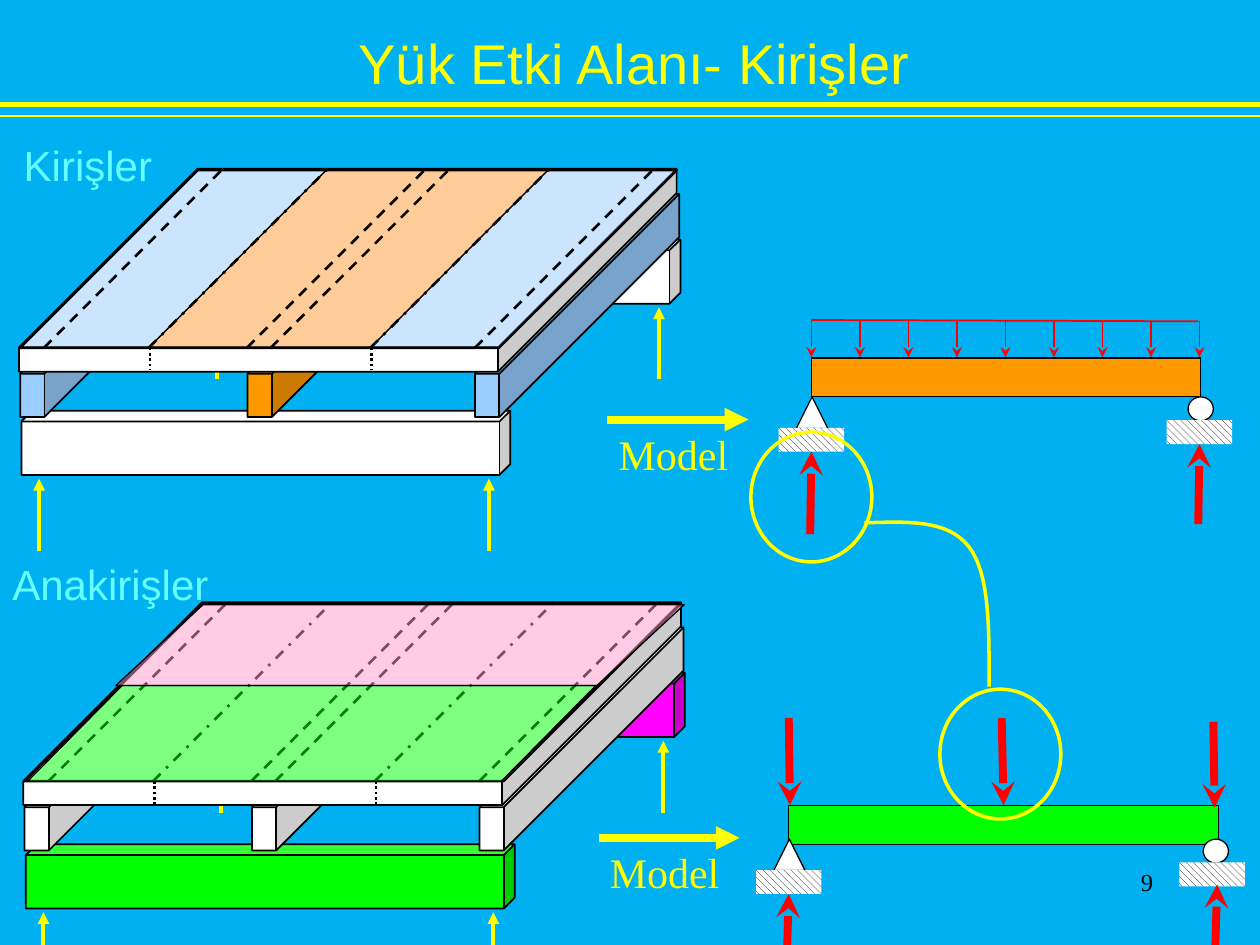
import lxml.etree
import pptx
import pptx.dml.color
import pptx.enum.dml
import pptx.enum.shapes
import pptx.enum.text
import pptx.oxml.ns
import pptx.util

SHAPE = pptx.enum.shapes.MSO_SHAPE
DASH = pptx.enum.dml.MSO_LINE
ALIGN = pptx.enum.text.PP_ALIGN
YELLOW, RED, BLACK, WHITE = "FFFF00", "FF0000", "000000", "FFFFFF"
GREEN, BLUE, ORANGE, CYAN = "00FF00", "99CCFF", "FF9900", "66FFFF"
SLAB_RUN = 1.41             # slab depth, equal across and up the slide
SLAB_FRONT = 2.76           # front edge of the upper slab
LOWER_FLOOR = (0.035, 3.44)  # shift from the upper floor to the lower one


def inch(value):
    return pptx.util.Cm(value * 2.54)


def rgb(code):
    return pptx.dml.color.RGBColor.from_string(code)


def paint(shape, fill=None, line=None, width=1, alpha=None):
    """Fill and outline a shape; None leaves that part empty."""
    shape.shadow.inherit = False
    if fill:
        shape.fill.solid()
        shape.fill.fore_color.rgb = rgb(fill)
        if alpha:
            color = shape.fill._xPr.find(".//" + pptx.oxml.ns.qn("a:srgbClr"))
            lxml.etree.SubElement(color, pptx.oxml.ns.qn("a:alpha"), val=str(alpha * 1000))
    else:
        shape.fill.background()
    if line:
        shape.line.color.rgb = rgb(line)
        shape.line.width = pptx.util.Pt(width)
    else:
        shape.line.fill.background()
    return shape


def block(slide, kind, box, fill=None, line=BLACK, width=0.75, adj=None, alpha=None):
    shape = slide.shapes.add_shape(kind, *map(inch, box))
    if adj is not None:
        shape.adjustments[0] = adj
    return paint(shape, fill, line, width, alpha)


def cube(slide, box, fill, adj):
    block(slide, SHAPE.CUBE, box, fill, width=1, adj=adj)


def outline(slide, points, closed=True, **style):
    points = [(inch(x), inch(y)) for x, y in points]
    builder = slide.shapes.build_freeform(*points[0], scale=1.0)
    builder.add_line_segments(points[1:], close=closed)
    return paint(builder.convert_to_shape(), **style)


def line(slide, start, end, color, width, dash=None, head=None, joined=None):
    """Straight line; joined is (shape, site) for its far end."""
    straight = slide.shapes.add_connector(
        pptx.enum.shapes.MSO_CONNECTOR.STRAIGHT, *map(inch, (*start, *end)))
    straight.line.color.rgb = rgb(color)
    straight.line.width = pptx.util.Pt(width)
    if dash:
        straight.line.dash_style = dash
    if head:
        lxml.etree.SubElement(straight.line._get_or_add_ln(),
                              pptx.oxml.ns.qn("a:tailEnd"), type=head)
    lxml.etree.SubElement(straight._element.spPr, pptx.oxml.ns.qn("a:effectLst"))
    if joined:
        straight.end_connect(*joined)


def force(slide, start, end, joined=None):
    line(slide, start, end, RED, 4.5, head="stealth", joined=joined)


def write(frame, text, size, font, color, align=ALIGN.LEFT, spacing=None, wrap=True):
    frame.word_wrap = wrap
    frame.text = text
    paragraph = frame.paragraphs[0]
    paragraph.alignment = align
    paragraph.line_spacing = spacing
    paragraph.font.size = pptx.util.Pt(size)
    paragraph.font.name = font
    paragraph.font.color.rgb = rgb(color)


def label(slide, box, *text, **layout):
    write(slide.shapes.add_textbox(*map(inch, box)).text_frame, *text, **layout)


def heading(slide, text):
    title = slide.shapes.title
    title.left, title.top, title.width, title.height = map(inch, (2.73, 0.17, 4.61, 0.64))
    write(title.text_frame, text, 32, "Arial", YELLOW, ALIGN.CENTER, wrap=False)
    for y, width in ((0.83, 3), (0.92, 1)):
        line(slide, (0, y), (10, y), YELLOW, width)


def floor_frame(slide, shift, girders, beams):
    """Girders, their reactions, beams and slab, from back to front."""
    dx, dy = shift
    for girder, left, top, feet in ((girders[0], 1.52, 1.9, (1.72, 5.23)),
                                    (girders[1], 0.17, 3.26, (0.31, 3.88))):
        reactions = [((x + dx, top + dy + 1.11), (x + dx, top + dy + 0.54)) for x in feet]
        if top < 3:     # the rear reactions stand behind their girder
            for start, end in reactions:
                line(slide, start, end, YELLOW, 2.25, head="triangle")
        cube(slide, (left + dx, top + dy, 3.88, 0.51), girder, 0.168)
        if top > 3:
            for start, end in reactions:
                line(slide, start, end, YELLOW, 2.25, head="triangle")
    for index in (2, 1, 0):
        cube(slide, (0.16 + 1.805 * index + dx, 1.54 + dy, 1.62, 1.77), beams[index], 0.881)
    cube(slide, (0.15 + dx, 1.34 + dy, 5.22, 1.61), WHITE, 0.881)


def slab_strip(slide, left, right, shift=(0, 0), **style):
    front, back = SLAB_FRONT + shift[1], SLAB_FRONT - SLAB_RUN + shift[1]
    left, right = left + shift[0], right + shift[0]
    outline(slide, [(left, front), (right, front),
                    (right + SLAB_RUN, back), (left + SLAB_RUN, back)], **style)


def floor_lines(slide, shift):
    """Beam edges, strip borders and slab outline."""
    front = SLAB_FRONT + shift[1]
    borders = (1.18, 2.94)
    for positions, dash in (((3.77, 2.15, 1.96, 0.35), DASH.DASH), (borders, DASH.DASH_DOT)):
        for x in positions:
            x += shift[0]
            line(slide, (x, front), (x + SLAB_RUN, front - SLAB_RUN), BLACK, 1.5, dash)
    slab_strip(slide, 0.16, 3.96, shift, line=BLACK, width=1.5)
    for x in borders:
        x += shift[0] + 0.01
        line(slide, (x, front), (x, front + 0.18), BLACK, 1.5, DASH.ROUND_DOT)


def model_arrow(slide, left, y):
    line(slide, (left, y), (left + 1.12, y), YELLOW, 4.5, head="triangle")
    label(slide, (left - 0.01, y + 0.02, 1.07, 0.5), "Model", 24, "Times New Roman", YELLOW,
          align=ALIGN.CENTER, wrap=False)


def beam_model(slide, box, fill, support, roller, roller_ground):
    """Simply supported beam; returns the beam and its two grounds."""
    left = box[0]
    beam = block(slide, SHAPE.RECTANGLE, box, fill)
    block(slide, SHAPE.ISOSCELES_TRIANGLE, (left - 0.12, support, 0.25, 0.25), WHITE)
    block(slide, SHAPE.OVAL, (roller, support, 0.2, 0.19), WHITE)
    grounds = []
    for x, y in ((left - 0.26, support + 0.245), (roller_ground, support + 0.185)):
        ground = block(slide, SHAPE.RECTANGLE, (x, y, 0.52, 0.19), line=None)
        ground.fill.patterned()
        ground.fill.pattern = pptx.enum.dml.MSO_PATTERN.WIDE_DOWNWARD_DIAGONAL
        ground.fill.fore_color.rgb = rgb(BLACK)
        ground.fill.back_color.rgb = rgb(WHITE)
        grounds.append(ground)
    return beam, *grounds


def bezier(a, b, c, d, steps=16):
    for t in (i / steps for i in range(1, steps + 1)):
        u = 1 - t
        yield tuple(u**3 * p + 3 * u * u * t * q + 3 * u * t * t * r + t**3 * s
                    for p, q, r, s in zip(a, b, c, d))


def main():
    deck = pptx.Presentation()
    deck.slide_width, deck.slide_height = inch(10), inch(7.5)
    slide = deck.slides.add_slide(deck.slide_layouts[5])
    slide.background.fill.solid()
    slide.background.fill.fore_color.rgb = rgb("00B0F0")
    heading(slide, "Yük Etki Alanı- Kirişler")

    # Upper floor: strips carried by the beams
    label(slide, (0.09, 0.98, 1.56, 0.54), "Kirişler", 24, "Arial", CYAN, spacing=1.2)
    floor_frame(slide, (0, 0), (WHITE, WHITE), (BLUE, ORANGE, BLUE))
    slab_strip(slide, 0.15, 1.18, fill=BLUE, alpha=50)
    slab_strip(slide, 2.94, 3.96, fill=BLUE, alpha=50)
    slab_strip(slide, 1.18, 2.94, fill="FF9933", alpha=50, line=BLACK, width=0.75)
    floor_lines(slide, (0, 0))

    # Lower floor: halves carried by the main beams
    label(slide, (0, 4.3, 1.93, 0.59), "Anakirişler", 24, "Arial", CYAN, spacing=1.2)
    floor_frame(slide, LOWER_FLOOR, ("FF00FF", GREEN), (WHITE,) * 3)
    floor_lines(slide, LOWER_FLOOR)
    block(slide, SHAPE.PARALLELOGRAM, (0.22, 5.44, 4.51, 0.76), GREEN, adj=0.988, alpha=50)
    block(slide, SHAPE.PARALLELOGRAM, (0.92, 4.8, 4.51, 0.64), "FF99CC", adj=1.079, alpha=50)

    model_arrow(slide, 4.82, 3.33)
    model_arrow(slide, 4.75, 6.65)

    # Beam model with distributed load and reactions
    _, pin, roller = beam_model(slide, (6.44, 2.84, 3.09, 0.31), ORANGE, 3.15, 9.43, 9.26)
    for index in range(9):
        x = 6.44 + 0.385 * index
        line(slide, (x, 2.545), (x, 2.835), RED, 1, head="stealth")
    line(slide, (6.44, 2.54), (9.51, 2.55), RED, 1)
    force(slide, (6.43, 4.24), (6.45, 3.56), (pin, 2))
    force(slide, (9.51, 4.16), (9.53, 3.48), (roller, 2))

    # Main beam model with point loads and reactions
    girder, pin, _ = beam_model(slide, (6.26, 6.39, 3.41, 0.31), GREEN, 6.66, 9.55, 9.36)
    force(slide, (6.26, 5.7), (6.27, 6.39))
    force(slide, (7.95, 5.7), (7.96, 6.38), (girder, 0))
    force(slide, (9.63, 5.73), (9.64, 6.41))
    force(slide, (6.24, 7.78), (6.26, 7.1), (pin, 2))
    force(slide, (9.64, 7.7), (9.66, 7.02))

    # Beam reaction becomes the load on the main beam
    for left, top in ((5.96, 3.43), (7.46, 5.47)):
        block(slide, SHAPE.OVAL, (left, top, 0.96, 1.03), line=YELLOW, width=2)
    start, bend, end = (6.86, 4.15), (7.69, 4.34), (7.85, 5.45)
    link = [start, *bezier(start, (7.19, 4.14), (7.52, 4.12), bend),
            *bezier(bend, (7.86, 4.56), (7.85, 5.01), end)]
    outline(slide, link, closed=False, line=YELLOW, width=2)

    # Page number
    label(slide, (7.17, 6.83, 2.08, 0.5), "9", 14, "Times New Roman", BLACK, align=ALIGN.RIGHT)
    deck.save("out.pptx")


if __name__ == "__main__":
    main()
